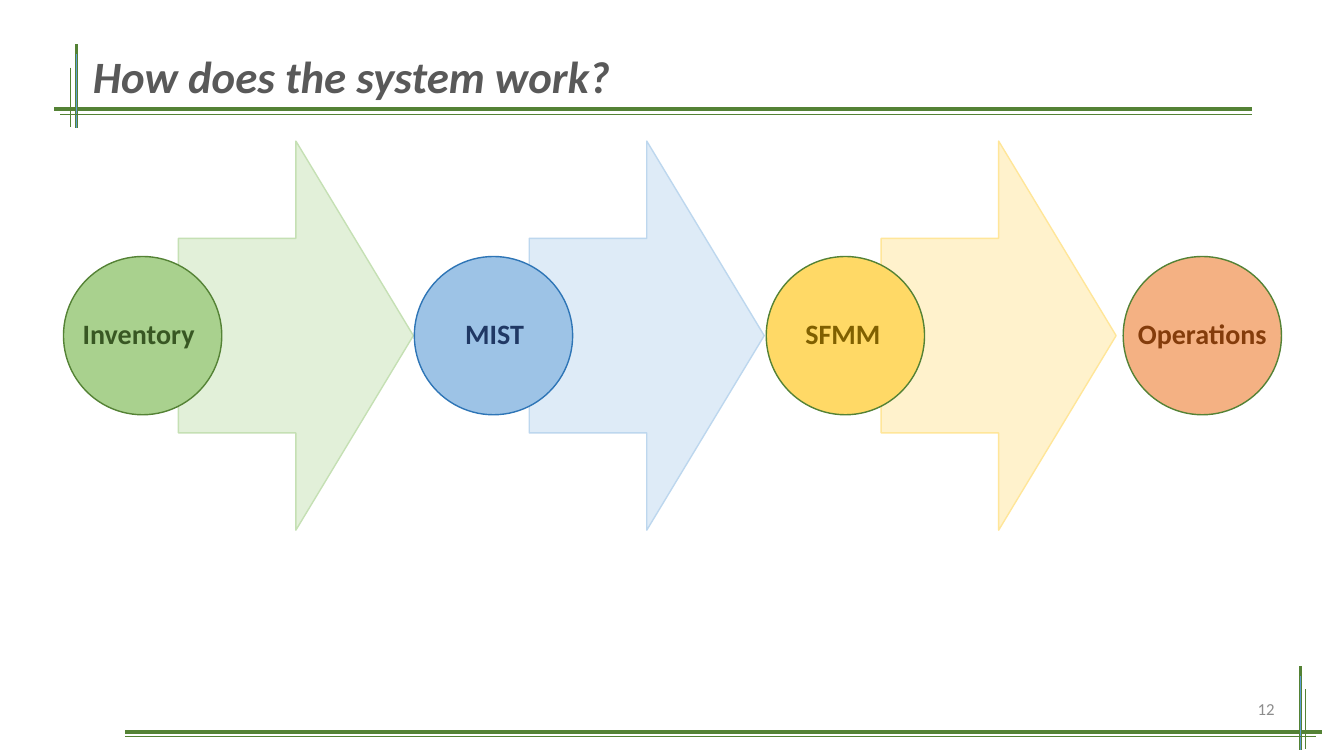
from lxml import etree
from pptx import Presentation
from pptx.dml.color import RGBColor
from pptx.enum.shapes import MSO_CONNECTOR, MSO_SHAPE
from pptx.enum.text import MSO_ANCHOR, PP_ALIGN
from pptx.oxml.ns import qn
from pptx.util import Inches, Pt

ARROW, CIRCLE = MSO_SHAPE.RIGHT_ARROW, MSO_SHAPE.OVAL
STRAIGHT = MSO_CONNECTOR.STRAIGHT
MIDDLE, TOP = MSO_ANCHOR.MIDDLE, MSO_ANCHOR.TOP
LEFT, CENTER, RIGHT = PP_ALIGN.LEFT, PP_ALIGN.CENTER, PP_ALIGN.RIGHT
GREEN, BLUE = "548235", "5B9BD5"
THICK, THIN = 2.5, 0.5

# circle left, label left and width, label, text, circle fill and line, arrow fill and line
STAGES = [
    (0.63, 0.59, 1.57, "Inventory", "385723", "A9D18E", GREEN, ("E2F0D9", "C5E0B4")),
    (4.11, 4.12, 1.57, "MIST", "203864", "9DC3E6", "2E75B6", ("DEEBF7", "BDD7EE")),
    (7.6, 7.69, 1.34, "SFMM", "806000", "FFD966", GREEN, ("FFF2CC", "FFE699")),
    (11.14, 11.14, 1.57, "Operations", "843C0B", "F4B183", GREEN, None),
]


def color(code):
    return RGBColor.from_string(code)


def write(shape, text, size, code, align=LEFT, anchor=TOP, bold=False, italic=False):
    frame = shape.text_frame
    frame.word_wrap = True
    frame.vertical_anchor = anchor
    para = frame.paragraphs[0]
    para.alignment = align
    run = para.add_run()
    run.text = text
    font = run.font
    font.name, font.size = "Calibri", Pt(size)
    font.bold, font.italic = bold, italic
    font.color.rgb = color(code)
    return para


def text_box(slide, box, text, size, code, **style):
    shape = slide.shapes.add_textbox(*map(Inches, box))
    write(shape, text, size, code, **style)


def draw(slide, kind, box, fill, edge):
    shape = slide.shapes.add_shape(kind, *map(Inches, box))
    shape.shadow.inherit = False
    shape.fill.solid()
    shape.fill.fore_color.rgb = color(fill)
    shape.line.color.rgb = color(edge)
    shape.line.width = Pt(1)


def rule(slide, start, end, code, width):
    line = slide.shapes.add_connector(STRAIGHT, *map(Inches, start + end))
    line.line.color.rgb = color(code)
    line.line.width = Pt(width)
    etree.SubElement(line._element.spPr, qn("a:effectLst"))


def corner(slide, box, post, thin_post, thin_x):
    """Crossed double rules: the box gives the thick rule's left and right ends,
    its height and the top of the post."""
    left, right, level, top = box
    low = top + 0.83
    thin_left, thin_right = thin_x
    rule(slide, (left, level), (right, level), GREEN, THICK)
    rule(slide, (post, top), (post, low), GREEN, THICK)
    rule(slide, (post, top + 0.1), (post, low), BLUE, THIN)
    rule(slide, (thin_post, top + 0.23), (thin_post, low - 0.01), GREEN, THIN)
    rule(slide, (thin_left, level + 0.05), (thin_right, level + 0.05), GREEN, THIN)


def header(slide, box):
    title = slide.shapes.title
    title.left, title.top, title.width, title.height = map(Inches, box)
    para = write(title, "How does the system work?", 32, "595959",
                 anchor=MIDDLE, bold=True, italic=True)
    para.line_spacing = 0.9


def flow(slide, top, height, size):
    """Stages on one axis, each arrow leading to the next circle."""
    mid = top + height / 2
    for left, text_left, width, name, ink, fill, edge, arrow in STAGES:
        if arrow:
            draw(slide, ARROW, (left + 1.14, top, 2.33, height), *arrow)
        draw(slide, CIRCLE, (left, mid - size / 2, size, size), fill, edge)
        text_box(slide, (text_left, mid - 0.24, width, 0.44), name, 20, ink,
                 align=CENTER, bold=True)


def main():
    prs = Presentation()
    prs.slide_width, prs.slide_height = Inches(13.33), Inches(7.5)
    slide = prs.slides.add_slide(prs.slide_layouts[5])
    corner(slide, (0.54, 12.42, 1.08, 0.44), 0.76, 0.7, (0.6, 12.42))
    corner(slide, (1.24, 13.11, 7.26, 6.61), 12.9, 12.95, (1.24, 13.05))
    flow(slide, 1.4, 3.86, 1.57)
    header(slide, (0.82, 0.26, 11.62, 1.04))
    text_box(slide, (9.74, 6.83, 3, 0.4), "12", 12, "8C8C8C",
             align=RIGHT, anchor=MIDDLE)
    prs.save("out.pptx")


if __name__ == "__main__":
    main()
